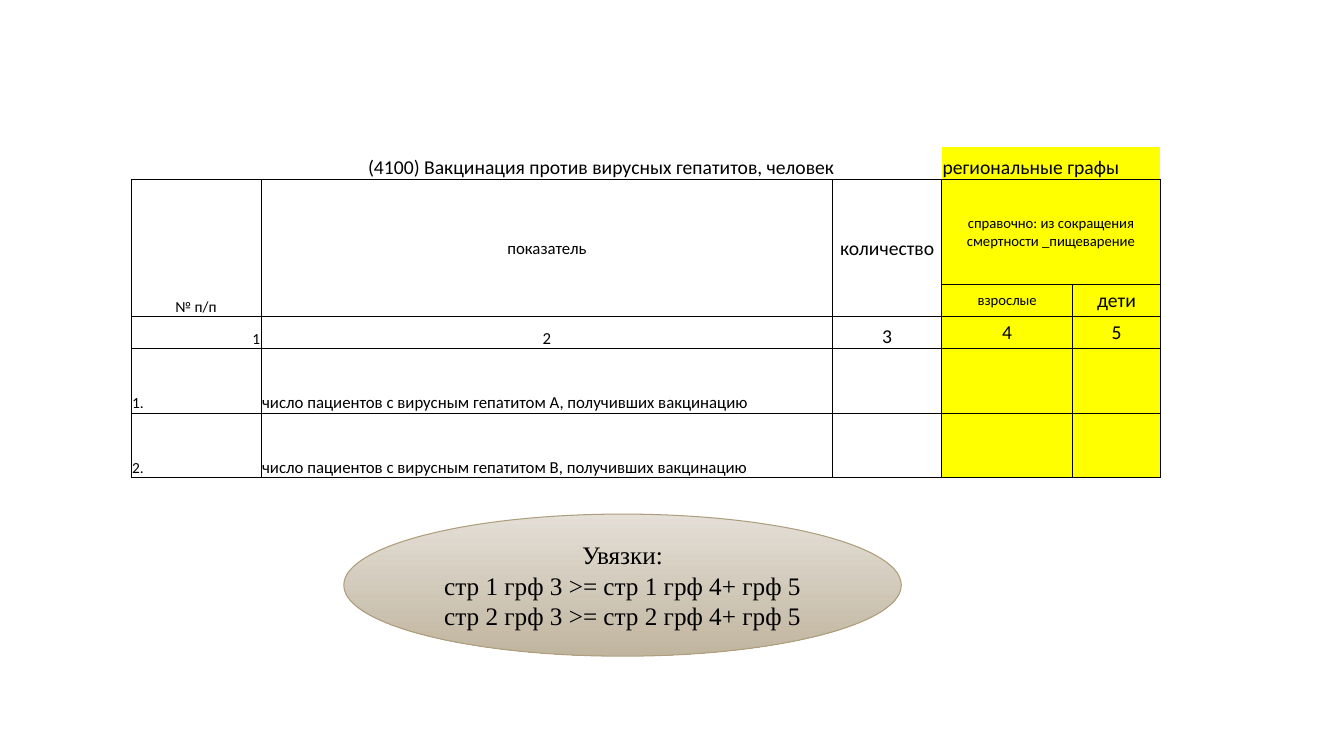
"""Build the slide on hepatitis vaccination, form 4100."""
import pptx
import pptx.dml.color
import pptx.enum.shapes
import pptx.enum.text
import pptx.oxml
import pptx.oxml.ns
import pptx.util
from pptx.util import Inches

HUES = {
    "ink": "000000",
    "mark": "FFFF00",
    "light": "E4DFD7",
    "dark": "C0B59F",
    "edge": "AE9E7C",
}
ALIGN = pptx.enum.text.PP_ALIGN
ANCHOR = pptx.enum.text.MSO_ANCHOR
SIDES = {"l": ALIGN.LEFT, "c": ALIGN.CENTER, "r": ALIGN.RIGHT}


def hue(name):
    return pptx.dml.color.RGBColor.from_string(HUES[name])


def write(text, para, size=14, face="Calibri", side="l"):
    para.alignment = SIDES[side]
    run = para.add_run()
    run.text = text
    run.font.size = pptx.util.Pt(size)
    run.font.name = face
    run.font.color.rgb = hue("ink")


deck = pptx.Presentation()
deck.slide_width = Inches(13.33)
deck.slide_height = Inches(7.5)
slide = deck.slides.add_slide(deck.slide_layouts[6])

wide = [1.29, 5.67, 1.08, 1.3, 0.87]
high = [0.32, 1.04, 0.32, 0.32, 0.64, 0.64]
frame = slide.shapes.add_table(
    len(high), len(wide), Inches(1.3), Inches(1.46),
    Inches(sum(wide)), Inches(sum(high)))
table = frame.table
table.first_row = False
table.horz_banding = False
for col, width in zip(table.columns, wide):
    col.width = Inches(width)
for row, height in zip(table.rows, high):
    row.height = Inches(height)

words = {
    (0, 1): ("(4100) Вакцинация против вирусных гепатитов, человек", 14, "c"),
    (0, 3): ("региональные графы", 14, "l"),
    (1, 0): ("№ п/п", 11, "c"),
    (1, 1): ("показатель", 12, "c"),
    (1, 2): ("количество", 14, "c"),
    (1, 3): ("справочно: из сокращения смертности _пищеварение", 10.5, "c"),
    (2, 3): ("взрослые", 10.5, "c"),
    (2, 4): ("дети", 14, "c"),
    (3, 0): ("1", 11, "r"),
    (3, 1): ("2", 12, "c"),
    (3, 2): ("3", 14, "c"),
    (3, 3): ("4", 14, "c"),
    (3, 4): ("5", 14, "c"),
    (4, 0): ("1.", 11, "l"),
    (4, 1): ("число пациентов с вирусным гепатитом А, получивших вакцинацию", 12, "l"),
    (5, 0): ("2.", 11, "l"),
    (5, 1): ("число пациентов с вирусным гепатитом В, получивших вакцинацию", 12, "l"),
}
middle = {(1, 1), (1, 2), (1, 3), (2, 3), (2, 4), (3, 3), (3, 4)}

for row in range(len(high)):
    for col in range(len(wide)):
        cell = table.cell(row, col)
        cell.margin_left = cell.margin_right = cell.margin_top = Inches(0.01)
        cell.margin_bottom = 0
        cell.vertical_anchor = ANCHOR.MIDDLE if (row, col) in middle else ANCHOR.BOTTOM
        text, size, side = words.get((row, col), ("", 11, "l"))
        write(text, cell.text_frame.paragraphs[0], size=size, side=side)
        props = cell._tc.get_or_add_tcPr()
        for tag in ("lnL", "lnR", "lnT", "lnB"):
            if row > 0 or tag == "lnB":
                paint = f'<a:solidFill><a:srgbClr val="{HUES["ink"]}"/></a:solidFill>'
            else:
                paint = "<a:noFill/>"
            props.append(pptx.oxml.parse_xml(
                f'<a:{tag} {pptx.oxml.ns.nsdecls("a")} w="6350">{paint}</a:{tag}>'))
        if col >= 3:
            cell.fill.solid()
            cell.fill.fore_color.rgb = hue("mark")
        else:
            cell.fill.background()

spans = [
    ((0, 1), (0, 2)), ((0, 3), (0, 4)), ((1, 3), (1, 4)),
    ((1, 0), (2, 0)), ((1, 1), (2, 1)), ((1, 2), (2, 2)),
]
for first, last in spans:
    table.cell(*first).merge(table.cell(*last))

oval = slide.shapes.add_shape(
    pptx.enum.shapes.MSO_SHAPE.OVAL,
    Inches(3.41), Inches(5.1), Inches(5.53), Inches(1.41))
oval.shadow.inherit = False
oval.fill.gradient()
oval.fill.gradient_angle = 270
for stop, name, place in zip(oval.fill.gradient_stops, ("light", "dark"), (0, 1)):
    stop.color.rgb = hue(name)
    stop.position = place
oval.line.color.rgb = hue("edge")
oval.line.width = pptx.util.Pt(0.75)

body = oval.text_frame
body.word_wrap = True
body.vertical_anchor = ANCHOR.MIDDLE
rules = ["Увязки:"] + [f"стр {n} грф 3 >= стр {n} грф 4+ грф 5" for n in (1, 2)]
for spot, rule in enumerate(rules):
    para = body.add_paragraph() if spot else body.paragraphs[0]
    write(rule, para, size=18, face="Times New Roman", side="c")

deck.save("out.pptx")
